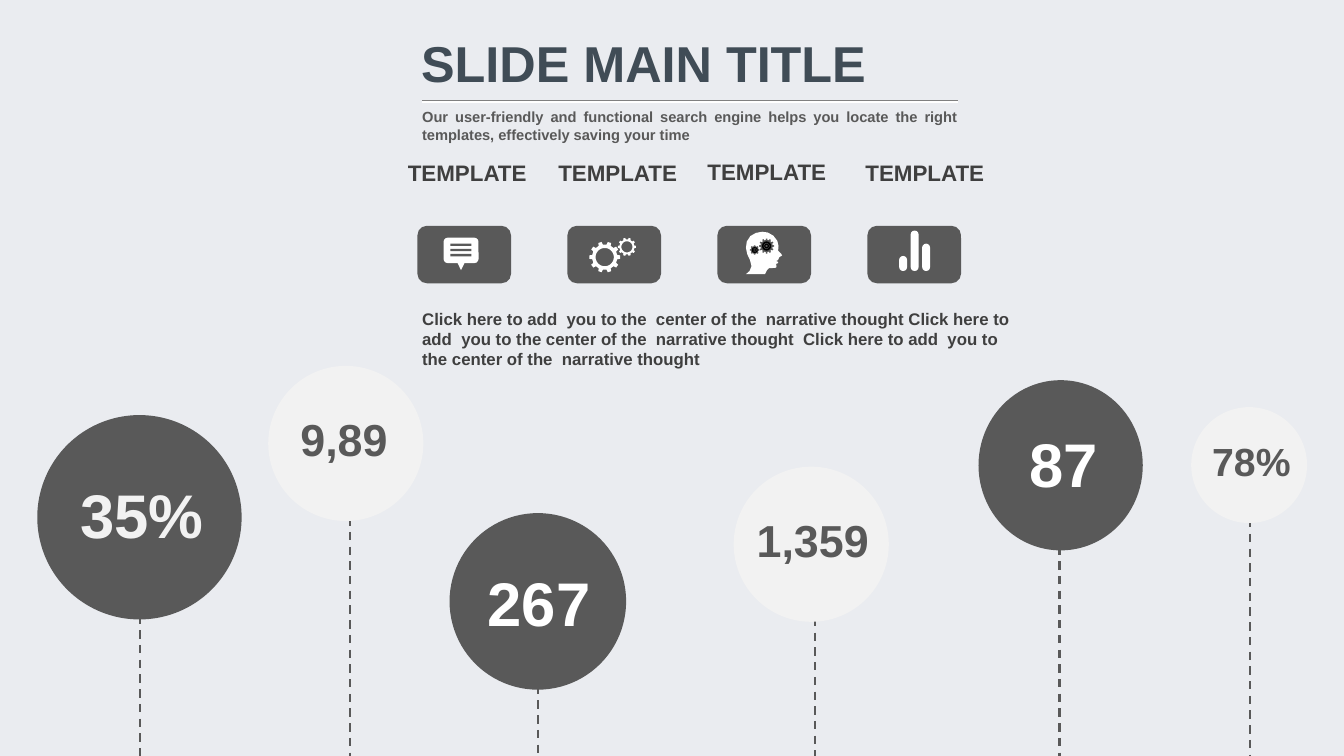
from math import cos, pi, sin

from lxml import etree
from pptx import Presentation
from pptx.dml.color import RGBColor
from pptx.enum.dml import MSO_LINE
from pptx.enum.shapes import MSO_CONNECTOR, MSO_SHAPE
from pptx.enum.text import MSO_ANCHOR, MSO_AUTO_SIZE, PP_ALIGN
from pptx.oxml.ns import qn
from pptx.util import Cm, Pt

DASH = MSO_LINE.DASH
STRAIGHT = MSO_CONNECTOR.STRAIGHT
OVAL, DONUT = MSO_SHAPE.OVAL, MSO_SHAPE.DONUT
RECT, ROUNDED = MSO_SHAPE.RECTANGLE, MSO_SHAPE.ROUNDED_RECTANGLE
TOP, NO_FIT = MSO_ANCHOR.TOP, MSO_AUTO_SIZE.NONE
LEFT, JUSTIFY = PP_ALIGN.LEFT, PP_ALIGN.JUSTIFY

COLORS = {
    "background": "EAECF0", "title": "404C56", "text": "3F3F3F",
    "dark": "595959", "light": "F2F2F2", "white": "FFFFFF",
    "black": "000000", "rule": "808080",
}
SLIDE_W, SLIDE_H = 33.87, 19.05


def color(name):
    return RGBColor.from_string(COLORS[name])


class SlideBuilder:
    """Holds the font and the slide; every length is in centimetres."""

    def __init__(self, slide, font="Arial"):
        self.slide, self.shapes, self.font = slide, slide.shapes, font
        slide.background.fill.solid()
        slide.background.fill.fore_color.rgb = color("background")

    def fill_frame(self, frame, lines, size, ink, align=LEFT):
        frame.word_wrap = True
        frame.auto_size = NO_FIT
        frame.vertical_anchor = TOP
        frame.text = "\n".join(lines)
        for paragraph in frame.paragraphs:
            paragraph.alignment = align
            font = paragraph.font
            font.name, font.size, font.bold = self.font, Pt(size), True
            font.color.rgb = color(ink)

    def title(self, words, box, size, ink):
        title = self.shapes.title
        title.left, title.top, title.width, title.height = map(Cm, box)
        self.fill_frame(title.text_frame, [words], size, ink, JUSTIFY)

    def text(self, lines, box, size, ink, align=LEFT):
        frame = self.shapes.add_textbox(*map(Cm, box)).text_frame
        self.fill_frame(frame, lines, size, ink, align)

    def paint(self, shape, fill):
        shape.shadow.inherit = False
        shape.fill.solid()
        shape.fill.fore_color.rgb = color(fill)
        shape.line.fill.background()

    def preset(self, kind, box, fill, adjustment=None):
        shape = self.shapes.add_shape(kind, *map(Cm, box))
        if adjustment is not None:
            shape.adjustments[0] = adjustment
        self.paint(shape, fill)

    def ring(self, x, y, radius, thickness, fill):
        box = (x - radius, y - radius, 2 * radius, 2 * radius)
        self.preset(DONUT, box, fill, thickness / (2 * radius))

    def outline(self, contours, fill):
        contours = [[(Cm(x), Cm(y)) for x, y in c] for c in contours]
        builder = self.shapes.build_freeform(*contours[0][0])
        builder.add_line_segments(contours[0][1:])
        for hole in contours[1:]:
            builder.move_to(*hole[0])
            builder.add_line_segments(hole[1:])
        self.paint(builder.convert_to_shape(), fill)

    def gear(self, x, y, tip, root, hole, teeth, fill):
        def polar(radius, angle):
            return x + radius * cos(angle), y + radius * sin(angle)

        step = 2 * pi / teeth
        corners = [(root, -0.27), (tip, -0.18), (tip, 0.18), (root, 0.27)]
        contours = [[polar(radius, (tooth + shift) * step)
                     for tooth in range(teeth) for radius, shift in corners]]
        if hole:
            contours.append([polar(hole, -k * pi / 18) for k in range(36)])
        self.outline(contours, fill)

    def line(self, x1, y1, x2, y2, ink, width, dash=None):
        line = self.shapes.add_connector(STRAIGHT, *map(Cm, (x1, y1, x2, y2)))
        line.line.color.rgb = color(ink)
        line.line.width = Pt(width)
        if dash is not None:
            line.line.dash_style = dash
        etree.SubElement(line._element.spPr, qn("a:effectLst"))


prs = Presentation()
prs.slide_width, prs.slide_height = Cm(SLIDE_W), Cm(SLIDE_H)
page = SlideBuilder(prs.slides.add_slide(prs.slide_layouts[5]))

# Heading
page.title("SLIDE MAIN TITLE", (10.36, 0.69, 14.05, 1.8), 36, "title")
page.line(10.64, 2.54, 24.13, 2.54, "rule", 1)
page.line(10.64, 2.57, 24.13, 2.57, "white", 1)
page.text(["Our user-friendly and functional search engine helps you locate "
           "the right templates, effectively saving your time"],
          (10.39, 2.59, 14, 1.19), 10.5, "dark", JUSTIFY)

# Cards with their captions
CARD_X, CARD_STEP = 10.52, 3.78
captions = [(10.03, 3.89), (13.82, 3.89), (17.58, 3.86), (21.56, 3.89)]
for index, (x, y) in enumerate(captions):
    page.text(["TEMPLATE"], (x, y, 4.06, 0.94), 16, "text")
    page.preset(ROUNDED, (CARD_X + index * CARD_STEP, 5.69, 2.36, 1.45),
                "dark", 0.167)

# Icon 1: speech bubble
page.outline([[(11.51, 6.58), (11.73, 6.58), (11.62, 6.81)]], "white")
page.preset(ROUNDED, (11.18, 5.99, 0.88, 0.64), "white", 0.16)
for row in range(3):
    page.preset(RECT, (11.35, 6.14 + row * 0.13, 0.53, 0.06), "dark")

# Icon 2: gears
page.gear(15.24, 6.48, 0.39, 0.32, 0.23, 10, "white")
page.gear(15.8, 6.22, 0.23, 0.19, 0.14, 10, "white")

# Icon 3: head with gears
HEAD_X, HEAD_Y = 18.8, 5.84
profile = [
    (0.41, 0), (0.55, 0.02), (0.69, 0.1), (0.79, 0.23), (0.82, 0.36),
    (0.81, 0.48), (0.89, 0.56), (0.91, 0.6), (0.84, 0.64), (0.81, 0.71),
    (0.76, 0.74), (0.81, 0.76), (0.81, 0.79), (0.76, 0.81), (0.77, 0.89),
    (0.74, 0.91), (0.58, 0.92), (0.53, 0.97), (0.48, 1.07), (0, 1.07),
    (0.09, 0.99), (0.14, 0.87), (0.1, 0.71), (0.03, 0.56), (0, 0.41),
    (0.02, 0.25), (0.11, 0.11), (0.25, 0.03),
]
page.outline([[(HEAD_X + x, HEAD_Y + y) for x, y in profile]], "white")
for x, y, tip, teeth in [(19.02, 6.3, 0.12, 8), (19.32, 6.2, 0.19, 12)]:
    page.gear(x, y, tip, tip * 0.8, 0, teeth, "dark")
    page.ring(x, y, tip * 0.62, tip * 0.22, "black")
    page.ring(x, y, tip * 0.32, tip * 0.16, "black")

# Icon 4: bars
for index, height in enumerate([0.38, 1.02, 0.69]):
    page.preset(ROUNDED, (22.66 + index * 0.29, 6.83 - height, 0.2, height),
                "white", 0.5)

# Narrative
page.text(["Click here to add  you to the  center of the  narrative thought "
           "Click here to",
           "add  you to the center of the  narrative thought  "
           "Click here to add  you to",
           "the center of the  narrative thought"],
          (10.39, 7.65, 15.4, 1.8), 12, "text")

# Figures on stems: words, size, ink, fill, circle, stem x, label box
figures = [
    ("35%", 44, "light", "dark", (0.94, 10.46, 5.15, 5.15), 3.53, (1.78, 11.89, 4.14)),
    ("1,359", 32, "dark", "light", (18.49, 11.76, 3.91, 3.91), 20.55, (18.82, 12.8, 3.73)),
    ("267", 44, "white", "dark", (11.33, 12.93, 4.45, 4.45), 13.56, (12.04, 14.12, 3.66)),
    ("78%", 28, "dark", "light", (30.02, 10.26, 2.92, 2.92), 31.5, (30.3, 10.9, 2.82)),
    ("87", 44, "white", "dark", (24.66, 9.58, 4.14, 4.29), 26.7, (25.7, 10.62, 2.59)),
    ("9,89", 32, "dark", "light", (6.76, 9.22, 3.91, 3.91), 8.81, (7.32, 10.26, 3.18)),
]
for words, size, ink, fill, circle, stem_x, label in figures:
    circle_bottom = circle[1] + circle[3]
    page.line(stem_x, circle_bottom - 0.1, stem_x, SLIDE_H, "dark", 1.5, DASH)
    page.preset(OVAL, circle, fill)
    page.text([words], (*label, size * 0.05), size, ink)

prs.save("out.pptx")
